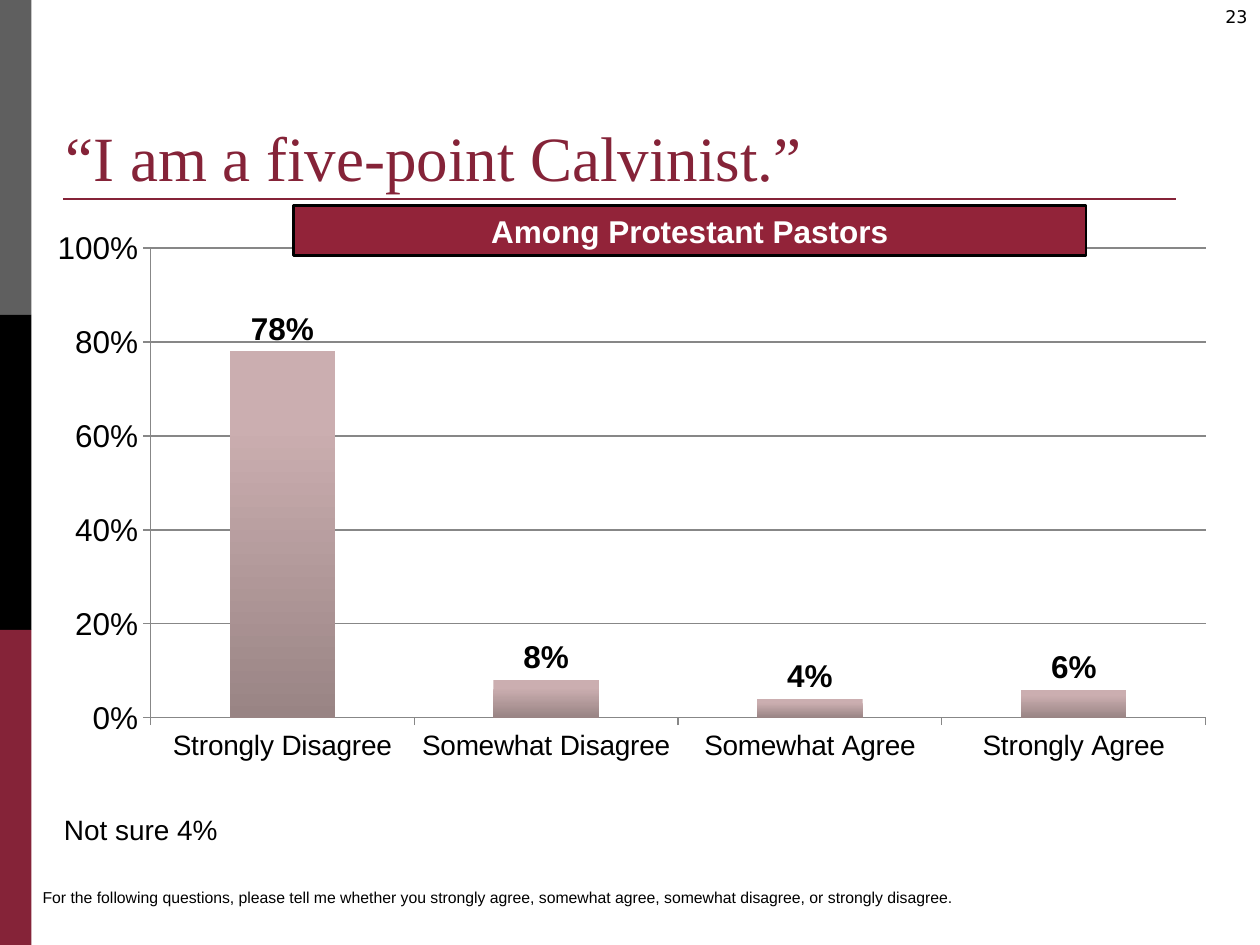
import dataclasses

import lxml.etree
import pptx
import pptx.chart.data
import pptx.dml.color
import pptx.enum.chart
import pptx.enum.shapes
import pptx.enum.text
import pptx.oxml
import pptx.oxml.ns
import pptx.util

Inches = pptx.util.Inches
Pt = pptx.util.Pt
Align = pptx.enum.text.PP_ALIGN
Anchor = pptx.enum.text.MSO_ANCHOR
qn = pptx.oxml.ns.qn


@dataclasses.dataclass(frozen=True)
class Theme:
    """Colours, fonts and type sizes of the slide."""
    wine: str = "852338"
    banner: str = "922339"
    grey: str = "5F5F5F"
    axis: str = "878787"
    black: str = "000000"
    white: str = "FFFFFF"
    light: str = "CBAEB0"
    dark: str = "998484"
    serif: str = "Times New Roman"
    sans: str = "Arial"
    mono: str = "DejaVu Sans"
    title: int = 36
    large: int = 18
    label: int = 16
    page: int = 10
    note: int = 9


THEME = Theme()


def rgb(code):
    """Return the colour for a hex code."""
    return pptx.dml.color.RGBColor.from_string(code)


def style(font, size, color=THEME.black, name=THEME.sans, bold=False):
    """Format a font."""
    font.size, font.name, font.bold = Pt(size), name, bold
    font.color.rgb = rgb(color)


def write(shape, text, size, align=Align.LEFT, anchor=Anchor.TOP, **look):
    """Put one formatted paragraph in a shape and return it."""
    frame = shape.text_frame
    frame.text = text
    frame.word_wrap = True
    frame.auto_size = pptx.enum.text.MSO_AUTO_SIZE.NONE
    frame.vertical_anchor = anchor
    para = frame.paragraphs[0]
    para.alignment = align
    style(para.runs[0].font, size, **look)
    return para


def add_text(slide, box, text, size, **look):
    """Add a text box."""
    shape = slide.shapes.add_textbox(*map(Inches, box))
    write(shape, text, size, **look)


def add_block(slide, box, fill, line=None):
    """Add a flat rectangle."""
    kind = pptx.enum.shapes.MSO_SHAPE.RECTANGLE
    shape = slide.shapes.add_shape(kind, *map(Inches, box))
    shape.shadow.inherit = False
    shape.fill.solid()
    shape.fill.fore_color.rgb = rgb(fill)
    if line:
        shape.line.color.rgb = rgb(line)
        shape.line.width = Pt(1.5)
    else:
        shape.line.fill.background()
    return shape


def add_rule(slide, left, right, top):
    """Add a level line without shadow."""
    kind = pptx.enum.shapes.MSO_CONNECTOR.STRAIGHT
    ends = map(Inches, (left, top, right, top))
    rule = slide.shapes.add_connector(kind, *ends)
    rule.line.color.rgb = rgb(THEME.wine)
    rule.line.width = Pt(1.5)
    lxml.etree.SubElement(rule.element.spPr, qn("a:effectLst"))


def set_title(slide, text):
    """Place and format the title."""
    shape = slide.shapes.title
    shape.left, shape.top = Inches(0.42), Inches(0.19)
    shape.width, shape.height = Inches(9.36), Inches(1.4)
    para = write(shape, text, THEME.title, anchor=Anchor.BOTTOM,
                 color=THEME.wine, name=THEME.serif)
    para.line_spacing = Pt(28)


def set_axis(axis, size):
    """Format the line, ticks and labels of an axis."""
    axis.format.line.color.rgb = rgb(THEME.axis)
    axis.major_tick_mark = pptx.enum.chart.XL_TICK_MARK.OUTSIDE
    axis.minor_tick_mark = pptx.enum.chart.XL_TICK_MARK.NONE
    style(axis.tick_labels.font, size)


def set_plot(chart, left, top, width, height):
    """Fix the inner plot area as fractions of the chart."""
    area = chart.element.find(".//" + qn("c:plotArea"))
    for old in area.findall(qn("c:layout")):
        area.remove(old)
    layout = lxml.etree.Element(qn("c:layout"))
    manual = lxml.etree.SubElement(layout, qn("c:manualLayout"))
    parts = (("layoutTarget", "inner"), ("xMode", "edge"), ("yMode", "edge"),
             ("x", left), ("y", top), ("w", width), ("h", height))
    for tag, val in parts:
        lxml.etree.SubElement(manual, qn("c:" + tag)).set("val", str(val))
    area.insert(0, layout)


def shade(fill):
    """Fill from light at the top to dark at the foot."""
    fill.gradient()
    fill.gradient_angle = 270
    stops = zip(fill.gradient_stops, (0.2, 1), (THEME.light, THEME.dark))
    for stop, place, color in stops:
        stop.position = place
        stop.color.rgb = rgb(color)


def add_bars(slide, box, cats, vals):
    """Add the column chart of answers."""
    data = pptx.chart.data.CategoryChartData(number_format="0%")
    data.categories = cats
    data.add_series("Series 1", vals)
    kind = pptx.enum.chart.XL_CHART_TYPE.COLUMN_CLUSTERED
    chart = slide.shapes.add_chart(kind, *map(Inches, box), data).chart
    chart.has_legend = chart.has_title = False
    style(chart.font, THEME.large)
    set_plot(chart, 0.095, 0.054, 0.889, 0.807)
    set_axis(chart.category_axis, THEME.label)
    axis = chart.value_axis
    set_axis(axis, THEME.large)
    axis.minimum_scale, axis.maximum_scale, axis.major_unit = 0, 1, 0.2
    axis.tick_labels.number_format = "0%"
    axis.tick_labels.number_format_is_linked = False
    axis.has_major_gridlines = True
    axis.major_gridlines.format.line.color.rgb = rgb(THEME.axis)
    plot = chart.plots[0]
    plot.vary_by_categories = False
    plot.gap_width = 150
    shade(plot.series[0].format.fill)
    labels = plot.series[0].data_labels
    labels.show_value = True
    labels.number_format = "0%"
    labels.number_format_is_linked = False
    labels.position = pptx.enum.chart.XL_LABEL_POSITION.OUTSIDE_END
    style(labels.font, THEME.large, bold=True)


def main():
    """Build and save the slide."""
    deck = pptx.Presentation()
    deck.slide_width, deck.slide_height = Inches(10), Inches(7.5)
    slide = deck.slides.add_slide(deck.slide_layouts[5])
    for row, color in enumerate((THEME.grey, THEME.black, THEME.wine)):
        add_block(slide, (0, 2.5 * row, 0.25, 2.5), color)
    add_rule(slide, 0.5, 9.33, 1.58)
    add_text(slide, (9.5, 0, 0.5, 0.33), "23", THEME.page,
             align=Align.RIGHT, name=THEME.mono)
    set_title(slide, "“I am a five-point Calvinist.”")
    add_text(slide, (0.24, 7, 7.66, 0.25),
             "For the following questions, please tell me whether you "
             "strongly agree, somewhat agree, somewhat disagree, or "
             "strongly disagree.", THEME.note)
    add_bars(slide, (0.3, 1.72, 9.42, 4.62),
             ("Strongly Disagree", "Somewhat Disagree",
              "Somewhat Agree", "Strongly Agree"),
             (0.78, 0.08, 0.04, 0.06))
    add_text(slide, (0.41, 6.4, 1.76, 0.37), "Not sure 4%", THEME.label)
    banner = add_block(slide, (2.33, 1.63, 6.29, 0.4),
                       THEME.banner, THEME.black)
    write(banner, "Among Protestant Pastors", THEME.large,
          align=Align.CENTER, color=THEME.white, bold=True)
    deck.save("out.pptx")


if __name__ == "__main__":
    main()
